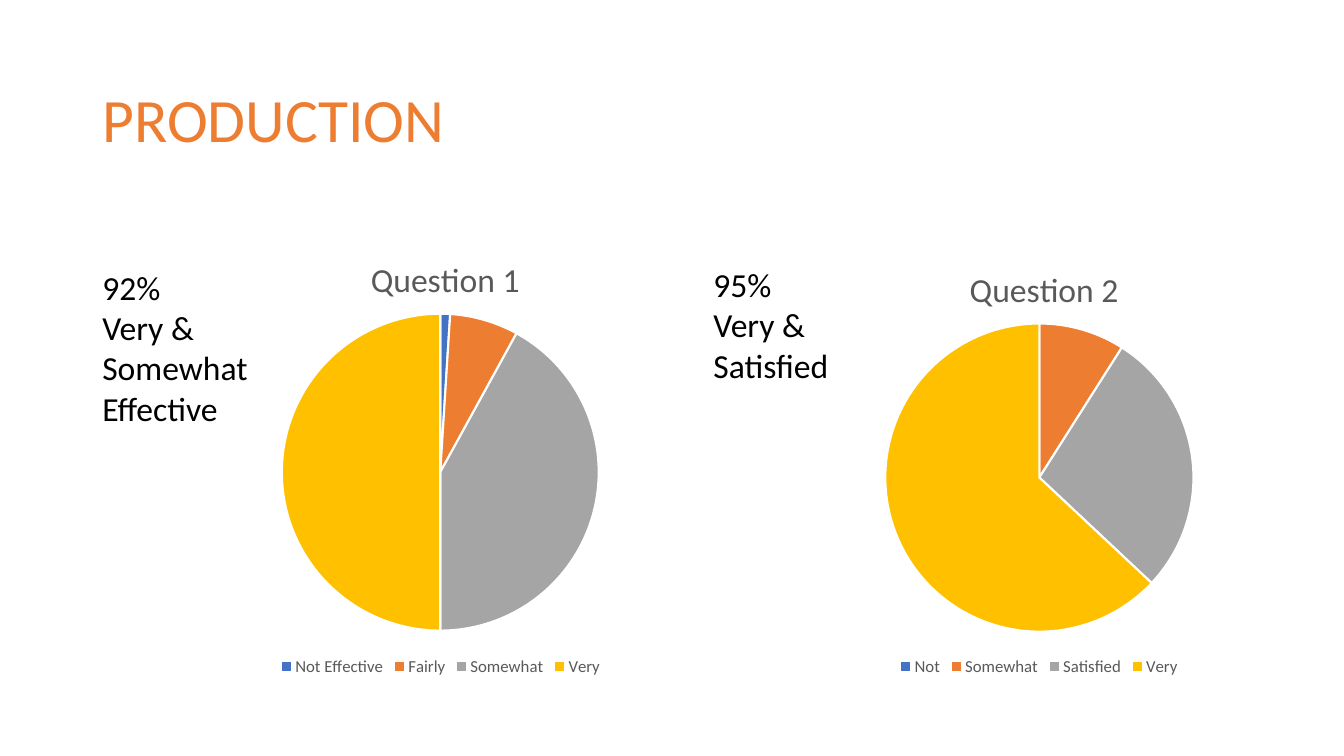
from dataclasses import dataclass

from lxml.etree import SubElement
from pptx import Presentation
from pptx.chart.data import CategoryChartData
from pptx.dml.color import RGBColor
from pptx.enum.chart import XL_CHART_TYPE, XL_LEGEND_POSITION
from pptx.enum.text import MSO_ANCHOR, PP_ALIGN
from pptx.oxml.ns import qn
from pptx.util import Pt


@dataclass(frozen=True)
class Theme:
    font: str = "Calibri"
    accent: str = "ED7D31"
    ink: str = "000000"
    muted: str = "595959"
    paper: str = "FFFFFF"
    slices: tuple = ("4472C4", "ED7D31", "A5A5A5", "FFC000")
    title_size: int = 44
    text_size: int = 24
    legend_size: int = 12


@dataclass(frozen=True)
class Box:
    left: float
    top: float
    width: float
    height: float

    def lengths(self):
        return Pt(self.left), Pt(self.top), Pt(self.width), Pt(self.height)


THEME = Theme()


def style_font(font, size, color):
    font.name = THEME.font
    font.size = Pt(size)
    font.bold = False
    font.color.rgb = RGBColor.from_string(color)


def add_run(paragraph, text, size, color):
    run = paragraph.add_run()
    run.text = text
    style_font(run.font, size, color)


def place_title(slide, box, text):
    title = slide.shapes.title
    title.left, title.top, title.width, title.height = box.lengths()
    frame = title.text_frame
    frame.vertical_anchor = MSO_ANCHOR.MIDDLE
    paragraph = frame.paragraphs[0]
    paragraph.alignment = PP_ALIGN.LEFT
    paragraph.line_spacing = 0.9
    add_run(paragraph, text, THEME.title_size, THEME.accent)


def add_finding(slide, box, lines):
    frame = slide.shapes.add_textbox(*box.lengths()).text_frame
    frame.word_wrap = True
    for index, line in enumerate(lines):
        paragraph = frame.add_paragraph() if index else frame.paragraphs[0]
        add_run(paragraph, line, THEME.text_size, THEME.ink)


def set_layout(parent, index, **settings):
    """Give a chart part a fixed position in fractions of the chart."""
    for old_layout in parent.findall(qn("c:layout")):
        parent.remove(old_layout)
    layout = parent.makeelement(qn("c:layout"), {})
    parent.insert(index, layout)
    manual = SubElement(layout, qn("c:manualLayout"))
    for name, value in settings.items():
        SubElement(manual, qn(f"c:{name}")).set("val", str(value))


def add_pie(slide, box, heading, answers, pie_top, diameter):
    data = CategoryChartData()
    data.categories = list(answers)
    data.add_series("Series 1", list(answers.values()))
    chart = slide.shapes.add_chart(XL_CHART_TYPE.PIE, *box.lengths(), data).chart
    style_font(chart.font, 10, THEME.ink)

    # Heading, centred over the pie
    chart.has_title = True
    paragraph = chart.chart_title.text_frame.paragraphs[0]
    add_run(paragraph, heading, THEME.text_size, THEME.muted)
    heading_width, heading_gap = 108, 45
    set_layout(chart.element.find(".//" + qn("c:title")), 1,
               xMode="edge", yMode="edge",
               x=round((1 - heading_width / box.width) / 2, 3),
               y=round((pie_top - heading_gap) / box.height, 3))

    # Legend
    chart.has_legend = True
    chart.legend.position = XL_LEGEND_POSITION.BOTTOM
    chart.legend.include_in_layout = False
    style_font(chart.legend.font, THEME.legend_size, THEME.muted)

    # Slices
    plot = chart.plots[0]
    plot.vary_by_categories = True
    for index, color in enumerate(THEME.slices):
        slice_format = plot.series[0].points[index].format
        slice_format.fill.solid()
        slice_format.fill.fore_color.rgb = RGBColor.from_string(color)
        slice_format.line.color.rgb = RGBColor.from_string(THEME.paper)
        slice_format.line.width = Pt(1.5)
    set_layout(chart.element.find(".//" + qn("c:plotArea")), 0,
               layoutTarget="inner", xMode="edge", yMode="edge",
               x=round((1 - diameter / box.width) / 2, 3),
               y=round(pie_top / box.height, 3),
               w=round(diameter / box.width, 3),
               h=round(diameter / box.height, 3))


def build_production_slide(presentation):
    slide = presentation.slides.add_slide(presentation.slide_layouts[5])
    place_title(slide, Box(66, 35, 828, 104.5), "PRODUCTION")

    # Charts
    add_pie(slide, Box(66, 167, 497.5, 319), "Question 1",
            {"Not Effective": 1, "Fairly": 7, "Somewhat": 42, "Very": 50},
            pie_top=57, diameter=226.5)
    add_pie(slide, Box(539.5, 167, 405.5, 319), "Question 2",
            {"Not": 0, "Somewhat": 9, "Satisfied": 28, "Very": 63},
            pie_top=64, diameter=220)

    # Findings beside the charts
    add_finding(slide, Box(66, 187, 146, 124),
                ["92%", "Very & Somewhat", "Effective"])
    add_finding(slide, Box(502.5, 185, 106.5, 94.5),
                ["95%", "Very & Satisfied"])


def main():
    presentation = Presentation()
    presentation.slide_width, presentation.slide_height = Pt(960), Pt(540)
    build_production_slide(presentation)
    presentation.save("out.pptx")


if __name__ == "__main__":
    main()
